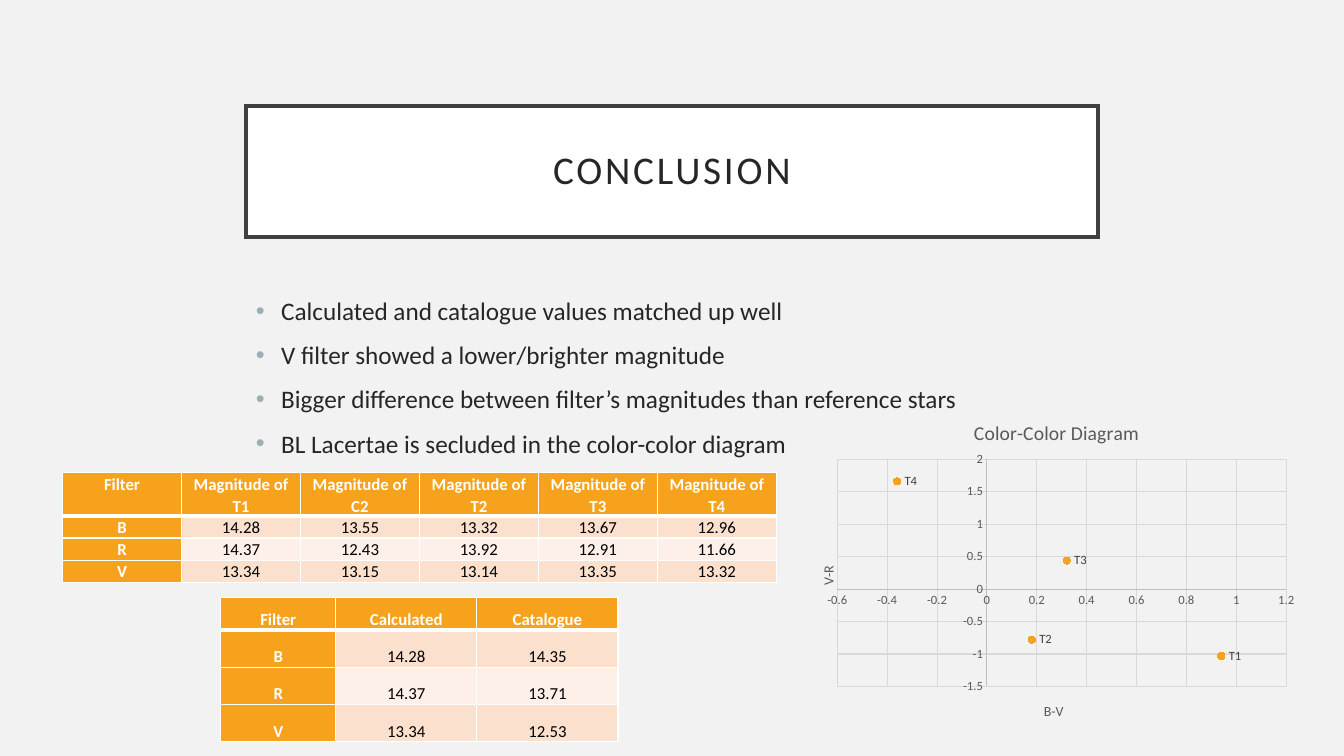
from dataclasses import dataclass

from pptx import Presentation
from pptx.chart.data import XyChartData
from pptx.dml.color import RGBColor
from pptx.enum.chart import XL_CHART_TYPE, XL_LABEL_POSITION, XL_MARKER_STYLE, XL_TICK_MARK
from pptx.enum.shapes import MSO_SHAPE
from pptx.enum.text import MSO_ANCHOR, PP_ALIGN
from pptx.oxml import parse_xml
from pptx.oxml.ns import nsdecls, qn
from pptx.util import Inches, Pt


@dataclass(frozen=True)
class Theme:
    font: str = "Calibri"
    background: str = "F2F2F2"
    white: str = "FFFFFF"
    black: str = "000000"
    frame: str = "404040"
    text: str = "262626"
    bullet: str = "9BAFB5"
    accent: str = "F6A21D"
    band_dark: str = "FBE0CD"
    band_light: str = "FDF0E8"
    chart_text: str = "595959"
    axis: str = "BFBFBF"
    grid: str = "D9D9D9"
    title_size: int = 28
    body_size: int = 18
    table_size: int = 12
    chart_title_size: int = 14
    axis_title_size: int = 10
    label_size: int = 9


THEME = Theme()

BULLETS = [
    "Calculated and catalogue values matched up well",
    "V filter showed a lower/brighter magnitude",
    "Bigger difference between filter’s magnitudes than reference stars",
    "BL Lacertae is secluded in the color-color diagram",
]
MAGNITUDES = [
    ["Filter"] + [f"Magnitude of {star}" for star in ("T1", "C2", "T2", "T3", "T4")],
    ["B", "14.28", "13.55", "13.32", "13.67", "12.96"],
    ["R", "14.37", "12.43", "13.92", "12.91", "11.66"],
    ["V", "13.34", "13.15", "13.14", "13.35", "13.32"],
]
COMPARISON = [
    ["Filter", "Calculated", "Catalogue"],
    ["B", "14.28", "14.35"],
    ["R", "14.37", "13.71"],
    ["V", "13.34", "12.53"],
]
STARS = {"T1": (0.94, -1.03), "T2": (0.18, -0.78), "T3": (0.32, 0.44), "T4": (-0.36, 1.66)}


def rgb(color):
    return RGBColor.from_string(color)


def style_font(font, size, color, bold=False):
    font.name = THEME.font
    font.size = Pt(size)
    font.bold = bold
    font.color.rgb = rgb(color)


def add_run(p, text, size, color, bold=False):
    r = p.add_run()
    r.text = text
    style_font(r.font, size, color, bold)
    return r


def add_title(slide, text):
    sp = slide.shapes.add_shape(
        MSO_SHAPE.RECTANGLE, Inches(2.44), Inches(1.05), Inches(8.45), Inches(1.3))
    sp.shadow.inherit = False
    sp.fill.solid()
    sp.fill.fore_color.rgb = rgb(THEME.white)
    sp.line.color.rgb = rgb(THEME.frame)
    sp.line.width = Pt(2.5)
    sp.line._get_or_add_ln().append(parse_xml(f'<a:miter {nsdecls("a")} lim="800000"/>'))
    tf = sp.text_frame
    tf.vertical_anchor = MSO_ANCHOR.MIDDLE
    p = tf.paragraphs[0]
    p.alignment = PP_ALIGN.CENTER
    p.line_spacing = 0.9
    r = add_run(p, text, THEME.title_size, THEME.text)
    r.font._element.set("spc", "200")


def add_bullets(slide, lines):
    sp = slide.shapes.add_textbox(Inches(2.44), Inches(2.88), Inches(8.45), Inches(3.39))
    tf = sp.text_frame
    tf.word_wrap = True
    for i, line in enumerate(lines):
        p = tf.add_paragraph() if i else tf.paragraphs[0]
        p.space_before = Pt(10)
        pPr = p._p.get_or_add_pPr()
        pPr.set("marL", str(Inches(0.25)))
        pPr.set("indent", str(Inches(-0.25)))
        pPr.append(parse_xml(
            f'<a:buClr {nsdecls("a")}><a:srgbClr val="{THEME.bullet}"/></a:buClr>'))
        pPr.append(parse_xml(f'<a:buFont {nsdecls("a")} typeface="Arial"/>'))
        pPr.append(parse_xml(f'<a:buChar {nsdecls("a")} char="•"/>'))
        add_run(p, line, THEME.body_size, THEME.text)


def set_borders(cell, top, bottom):
    """Draw white cell edges, with the top and bottom widths in points."""
    tcPr = cell._tc.get_or_add_tcPr()
    for side, width in (("L", 1), ("R", 1), ("T", top), ("B", bottom)):
        tcPr.append(parse_xml(
            f'<a:ln{side} {nsdecls("a")} w="{Pt(width)}"><a:solidFill>'
            f'<a:srgbClr val="{THEME.white}"/></a:solidFill></a:ln{side}>'))


def add_table(slide, rows, left, top, widths, heights, anchor, spacing):
    table = slide.shapes.add_table(
        len(rows), len(widths), Inches(left), Inches(top),
        Inches(sum(widths)), Inches(sum(heights))).table
    for column, width in zip(table.columns, widths):
        column.width = Inches(width)
    for i, (values, height) in enumerate(zip(rows, heights)):
        table.rows[i].height = Inches(height)
        band = THEME.band_dark if i % 2 else THEME.band_light
        for j, value in enumerate(values):
            cell = table.cell(i, j)
            header = i == 0 or j == 0
            set_borders(cell, 3 if i == 1 else 1, 3 if i == 0 else 1)
            cell.fill.solid()
            cell.fill.fore_color.rgb = rgb(THEME.accent if header else band)
            cell.margin_left = cell.margin_right = Inches(0.07)
            cell.margin_top = cell.margin_bottom = 0
            cell.vertical_anchor = anchor
            p = cell.text_frame.paragraphs[0]
            p.alignment = PP_ALIGN.CENTER
            p.line_spacing = spacing
            add_run(p, value, THEME.table_size, THEME.white if header else THEME.black, header)


def place(element, index, target="", **fractions):
    """Fix a chart part as fractions of the chart frame."""
    for layout in element.findall(qn("c:layout")):
        element.remove(layout)
    sizes = "".join(f'<c:{key} val="{value}"/>' for key, value in fractions.items())
    element.insert(index, parse_xml(
        f'<c:layout {nsdecls("c")}><c:manualLayout>{target}'
        f'<c:xMode val="edge"/><c:yMode val="edge"/>{sizes}</c:manualLayout></c:layout>'))


def style_axis(axis, title, x, y):
    axis.major_tick_mark = axis.minor_tick_mark = XL_TICK_MARK.NONE
    axis.has_major_gridlines = True
    for line, color in ((axis.format.line, THEME.axis),
                        (axis.major_gridlines.format.line, THEME.grid)):
        line.color.rgb = rgb(color)
        line.width = Pt(0.75)
    style_font(axis.tick_labels.font, THEME.label_size, THEME.chart_text)
    p = axis.axis_title.text_frame.paragraphs[0]
    add_run(p, title, THEME.axis_title_size, THEME.chart_text)
    place(axis.axis_title._element, 1, x=x, y=y)


def add_color_diagram(slide):
    data = XyChartData()
    points = data.add_series("Series 1")
    for x, y in STARS.values():
        points.add_data_point(x, y)
    chart = slide.shapes.add_chart(
        XL_CHART_TYPE.XY_SCATTER, Inches(7.95), Inches(4.01),
        Inches(5.06), Inches(3.22), data).chart
    style_font(chart.font, THEME.axis_title_size, THEME.black)
    chart.has_legend = False
    chart.has_title = True
    p = chart.chart_title.text_frame.paragraphs[0]
    add_run(p, "Color-Color Diagram", THEME.chart_title_size, THEME.chart_text)
    chart.chart_title.include_in_layout = False
    chart.plots[0].vary_by_categories = False
    style_axis(chart.category_axis, "B-V", 0.47, 0.91)
    style_axis(chart.value_axis, "V-R", 0.03, 0.49)
    place(chart._chartSpace.chart.plotArea, 0, '<c:layoutTarget val="inner"/>',
          x=0.07, y=0.17, w=0.88, h=0.7)

    series = chart.plots[0].series[0]
    series.smooth = False
    series.format.line.fill.background()
    marker = series.marker
    marker.style = XL_MARKER_STYLE.CIRCLE
    marker.size = 5
    marker.format.fill.solid()
    marker.format.fill.fore_color.rgb = rgb(THEME.accent)
    marker.format.line.color.rgb = rgb(THEME.accent)
    for i, star in enumerate(STARS):
        label = series.points[i].data_label
        add_run(label.text_frame.paragraphs[0], star, THEME.label_size, THEME.frame)
        label.position = XL_LABEL_POSITION.RIGHT


def main():
    prs = Presentation()
    prs.slide_width, prs.slide_height = Inches(13.33), Inches(7.5)
    slide = prs.slides.add_slide(prs.slide_layouts[6])
    slide.background.fill.solid()
    slide.background.fill.fore_color.rgb = rgb(THEME.background)
    add_title(slide, "CONCLUSION")
    add_bullets(slide, BULLETS)
    add_table(slide, MAGNITUDES, 0.62, 4.69, [1.18] * 6, [0.42] + [0.22] * 3,
              MSO_ANCHOR.TOP, 1.07)
    add_table(slide, COMPARISON, 2.19, 5.93, [1.14, 1.4, 1.4], [0.32] + [0.37] * 3,
              MSO_ANCHOR.BOTTOM, 1.15)
    add_color_diagram(slide)
    prs.save("out.pptx")


if __name__ == "__main__":
    main()
